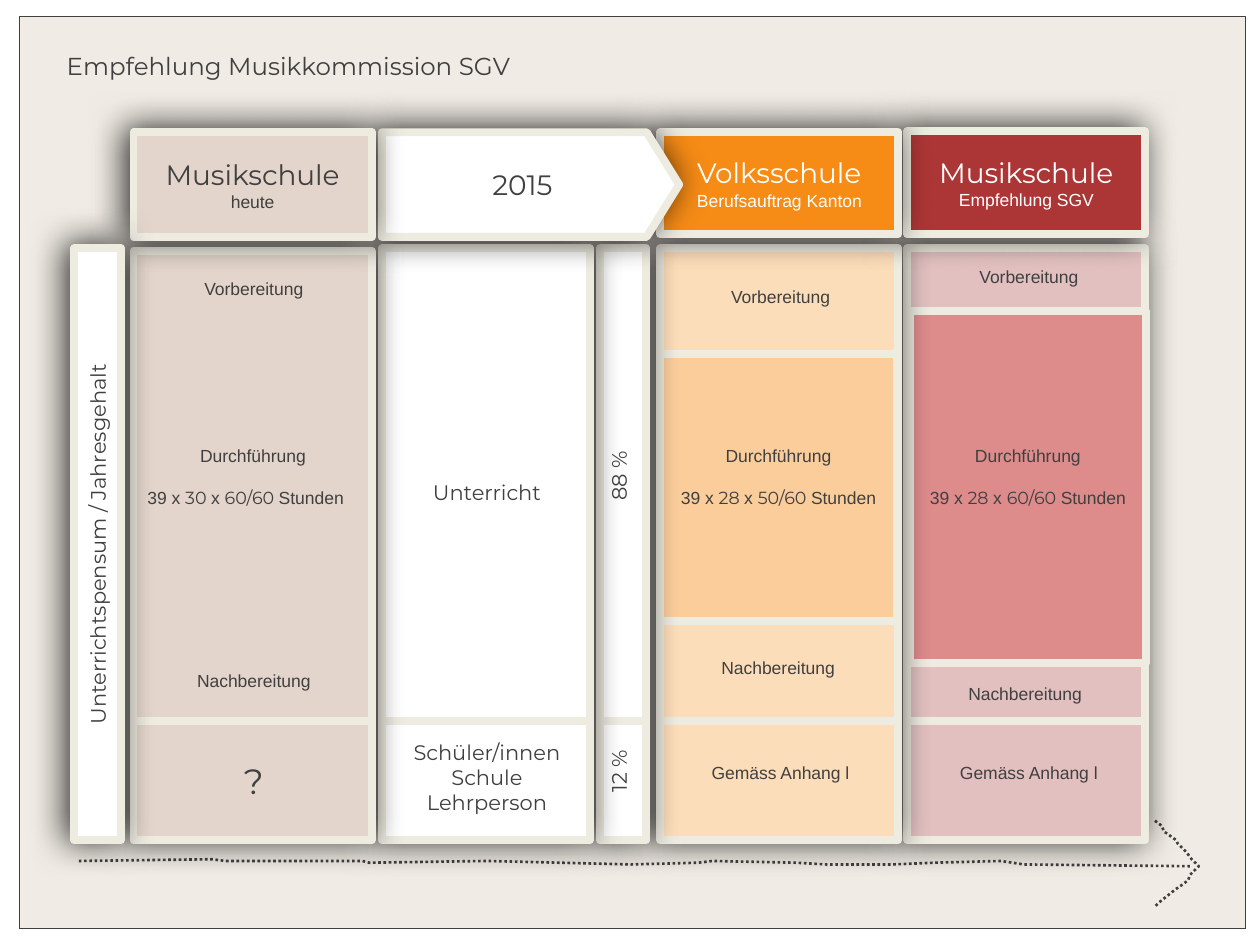
from pptx import Presentation
from pptx.dml.color import RGBColor as RGB
from pptx.enum.dml import MSO_LINE as Dash
from pptx.enum.shapes import MSO_CONNECTOR as Conn, MSO_SHAPE as Kind
from pptx.enum.text import MSO_ANCHOR as Anchor, PP_ALIGN as Align
from pptx.oxml import parse_xml
from pptx.oxml.ns import nsdecls
from pptx.util import Pt

DARK = RGB(0x40, 0x40, 0x40)
WHITE = RGB(0xFF, 0xFF, 0xFF)
PAPER = RGB(0xF0, 0xEB, 0xE4)
CREAM = RGB(0xEE, 0xEC, 0xE1)
BEIGE = RGB(0xE3, 0xD5, 0xCB)
PEACH = RGB(0xFC, 0xDD, 0xBA)
APRICOT = RGB(0xFB, 0xCD, 0x9B)
ORANGE = RGB(0xF6, 0x8B, 0x16)
ROSE = RGB(0xE2, 0xC0, 0xC0)
CORAL = RGB(0xDD, 0x8B, 0x8B)
RED = RGB(0xAC, 0x36, 0x36)
SANS, MONT = "Arial", "Montserrat"

show = Presentation()
show.slide_width, show.slide_height = Pt(720), Pt(540)
slide = show.slides.add_slide(show.slide_layouts[6])
deck = slide.shapes


def box(place, fill, kind=Kind.RECTANGLE, shade=True):
    """Filled shape with a cream border and, if wanted, a soft shadow."""
    item = deck.add_shape(kind, *map(Pt, place))
    item.shadow.inherit = False
    item.fill.solid()
    item.fill.fore_color.rgb = fill
    item.line.color.rgb = CREAM
    item.line.width = Pt(4.5)
    if shade:
        glow = item._element.spPr.find("{*}effectLst")
        glow.append(parse_xml(
            f'<a:outerShdw {nsdecls("a")} blurRad="{Pt(20)}" dist="{Pt(4)}" '
            'dir="12000000" algn="tl" rotWithShape="0"><a:srgbClr val="000000">'
            '<a:alpha val="80000"/></a:srgbClr></a:outerShdw>'))
    return item


def text(words, host=None, place=None, size=10, font=SANS, color=DARK,
         align=Align.CENTER, anchor=Anchor.TOP, top=3.6, gap=0, turn=False):
    """Write lines; a line is a string or a list of (string, font, size)."""
    frame = (host or deck.add_textbox(*map(Pt, place))).text_frame
    frame.word_wrap = True
    frame.vertical_anchor = anchor
    frame.margin_top = Pt(top)
    if turn:
        frame._txBody.bodyPr.set("vert", "vert270")
    for i, line in enumerate(words):
        para = frame.add_paragraph() if i else frame.paragraphs[0]
        para.alignment = align
        if i:
            para.space_before = Pt(gap)
        runs = [(line, font, size)] if isinstance(line, str) else line
        for part, face, high in runs:
            run = para.add_run()
            run.text = part
            run.font.name, run.font.size = face, Pt(high)
            run.font.color.rgb = color


# Background and title
back = box((10.8, 9.4, 700.6, 521.3), PAPER, shade=False)
back.line.color.rgb = DARK
back.line.width = Pt(0.25)
back.line.dash_style = Dash.ROUND_DOT
text(["Empfehlung Musikkommission SGV"], place=(31, 25.9, 623.5, 24.5),
     size=14, font=MONT, align=Align.LEFT)

# Dotted arrow: head and shaft
head = [(660.2, 468.7), (663.8, 472.3), (665.3, 475.2), (672.5, 480.2),
        (673.2, 482.4), (678.2, 486.7), (681.1, 491), (684.7, 494.6),
        (680.4, 500.4), (679, 502.6), (674.6, 506.2), (672.5, 508.3),
        (667.4, 511.9), (662.4, 515.5), (660.2, 517.7)]
shaft = [(44.6, 491.8), (121, 491), (128.9, 491.8), (136.1, 492.5),
         (157.7, 491.8), (206.6, 492.5), (211, 493.2), (277.9, 492.5),
         (361.4, 493.9), (398.9, 493.2), (406.8, 492.5), (455, 493.2),
         (471.6, 493.9), (509.8, 493.9), (534.2, 493.2), (572, 492.5),
         (584.6, 493.9), (681.1, 494.6)]
for dots in (head, shaft):
    build = deck.build_freeform(*dots[0], scale=Pt(1))
    build.add_line_segments(dots[1:], close=False)
    trail = build.convert_to_shape()
    trail.shadow.inherit = False
    trail.fill.background()
    trail.line.color.rgb = DARK
    trail.line.width = Pt(1.5)
    trail.line.dash_style = Dash.ROUND_DOT

# Column grid
TOP, FOOT, SPLIT = 141.8, 480.2, 411.8
TALL = FOOT - TOP
WIDE, SLIM = 136.1, 26.6
BAR, NOW, TASK, RATE, STATE, PLAN = 42.5, 76.3, 218.2, 342.7, 377.3, 518.4


# Columns from right to left: left, top, width, fill, core (dx, top, high, fill,
# hours), labels (words, dx, top)
cols = [
    (PLAN, TOP, WIDE, ROSE, (1.4, 177.8, 200.9, CORAL, "28 ", "60/60 "),
     [("Vorbereitung", 2.2, 148.3), ("Nachbereitung", 0, 386.6),
      ("Gemäss Anhang l", 2.2, 432)]),
    (STATE, TOP, WIDE, PEACH, (0, 202.3, 152.6, APRICOT, "28 ", "50/60 "),
     [("Vorbereitung", 1.4, 159.8), ("Nachbereitung", 0, 372.2),
      ("Gemäss Anhang l", 1.4, 432)]),
    (RATE, TOP, SLIM, WHITE, None, []),
    (TASK, TOP, 118.8, WHITE, None, []),
    (NOW, 143.3, WIDE, BEIGE, (0, 250.6, 44, None, "30 ", "60/60 "),
     [("Vorbereitung", 1.4, 155.5), ("Nachbereitung", 1.4, 379.4)]),
]
for left, top, wide, fill, core, labels in cols:
    box((left, top, wide, FOOT - top), fill)
    for word, dx, y in labels:
        text([word], place=(left + dx, y, 134.6, 19.4))
    if core:
        dx, y, high, tint, count, share = core
        hours = [("39 x ", SANS, 10), (count, MONT, 10), ("x ", SANS, 10),
                 (share, MONT, 10), ("Stunden", SANS, 10)]
        if tint:
            block = box((left + dx, y, 135, high), tint, shade=False)
            text(["Durchführung", hours], block, top=254.2 - y, gap=12)
        else:
            text(["Durchführung"], place=(left + 0.7, y, 135, 19.4))
            text([hours], place=(left - 3.5, y + 24, 135, 19.4))
    rule = deck.add_connector(Conn.STRAIGHT, Pt(left), Pt(SPLIT),
                              Pt(left + wide), Pt(SPLIT))
    rule.line.color.rgb = CREAM
    rule.line.width = Pt(4.5)
    rule._element.spPr.append(parse_xml(f'<a:effectLst {nsdecls("a")}/>'))

# Words in the white columns and the open question
text(["88 %"], place=(RATE, TOP, 28.8, 260), size=12, font=MONT, turn=True)
text(["12 %"], place=(RATE, 401.8, 28.8, 77.8), size=12, font=MONT, turn=True)
text(["Unterricht"], place=(223.2, 270.7, 110.2, 21.6), size=12, font=MONT)
text(["Schüler/innen", "Schule", "Lehrperson"],
     place=(223.2, 419, 110.2, 51.1), size=12, font=MONT)
text(["?"], place=(NOW + 1.4, 430.6, 134.6, 31.7), size=20, font=MONT)

# Column heads from right to left
heads = [
    (PLAN, 74.9, WIDE, 59, RED, WHITE, "Musikschule", "Empfehlung SGV"),
    (STATE, 75.6, WIDE, 58.3, ORANGE, WHITE, "Volksschule",
     "Berufsauftrag Kanton"),
    (TASK, 75.6, 169.9, 59.8, WHITE, DARK, "2015", None),
    (NOW, 75.6, WIDE, 59.8, BEIGE, DARK, "Musikschule", "heute"),
]
for left, top, wide, high, fill, ink, name, note in heads:
    kind = Kind.RECTANGLE if note else Kind.PENTAGON
    tile = box((left, top, wide, high), fill, kind)
    if not note:
        tile.adjustments[0] = 0.31
    lines = [[(name, MONT, 16)]] + ([note] if note else [])
    text(lines, tile, color=ink, anchor=Anchor.MIDDLE)

# Upright bar at the left
text(["Unterrichtspensum / Jahresgehalt"], box((BAR, TOP, SLIM, TALL), WHITE),
     size=12, font=MONT, anchor=Anchor.MIDDLE, turn=True)

show.save("out.pptx")
